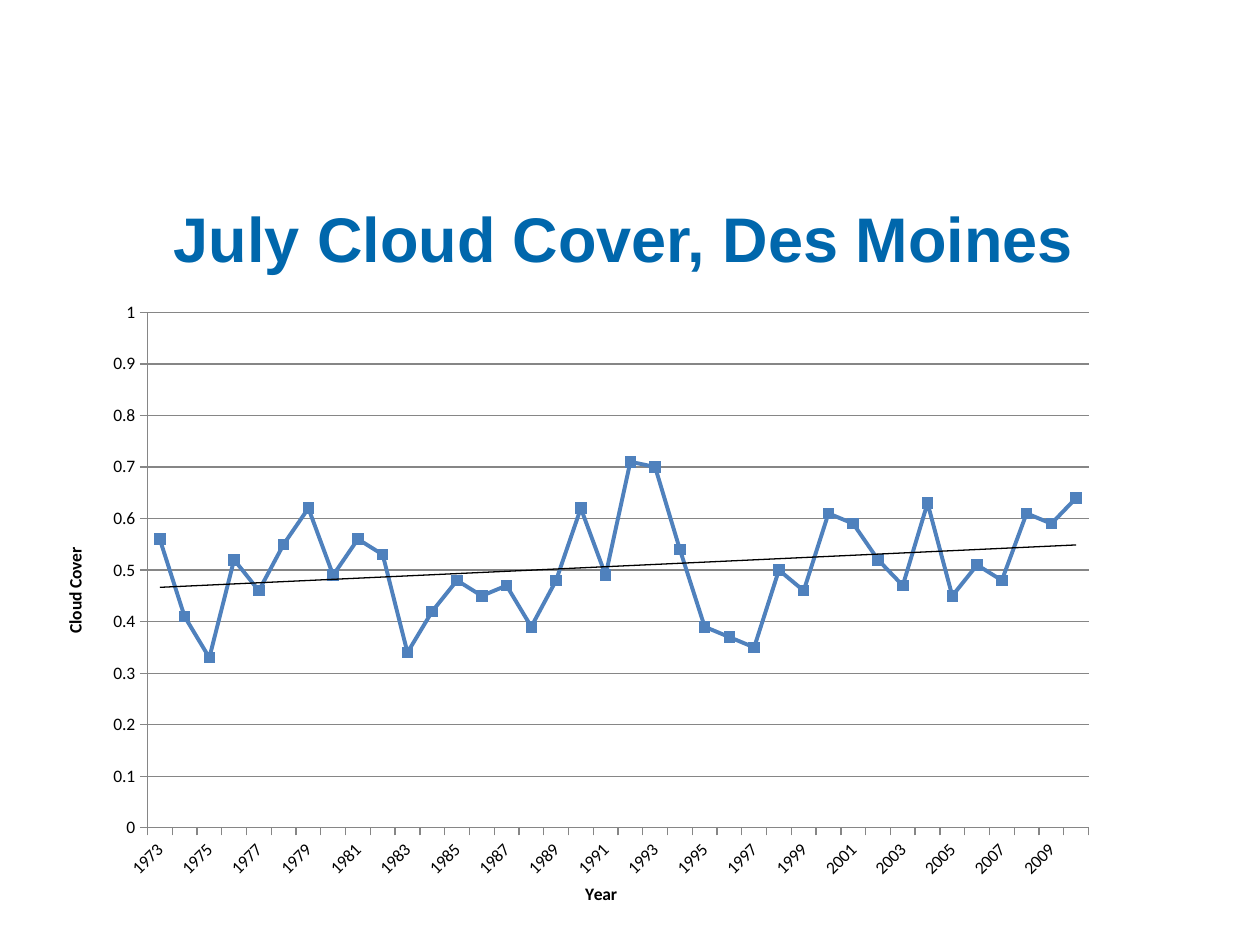
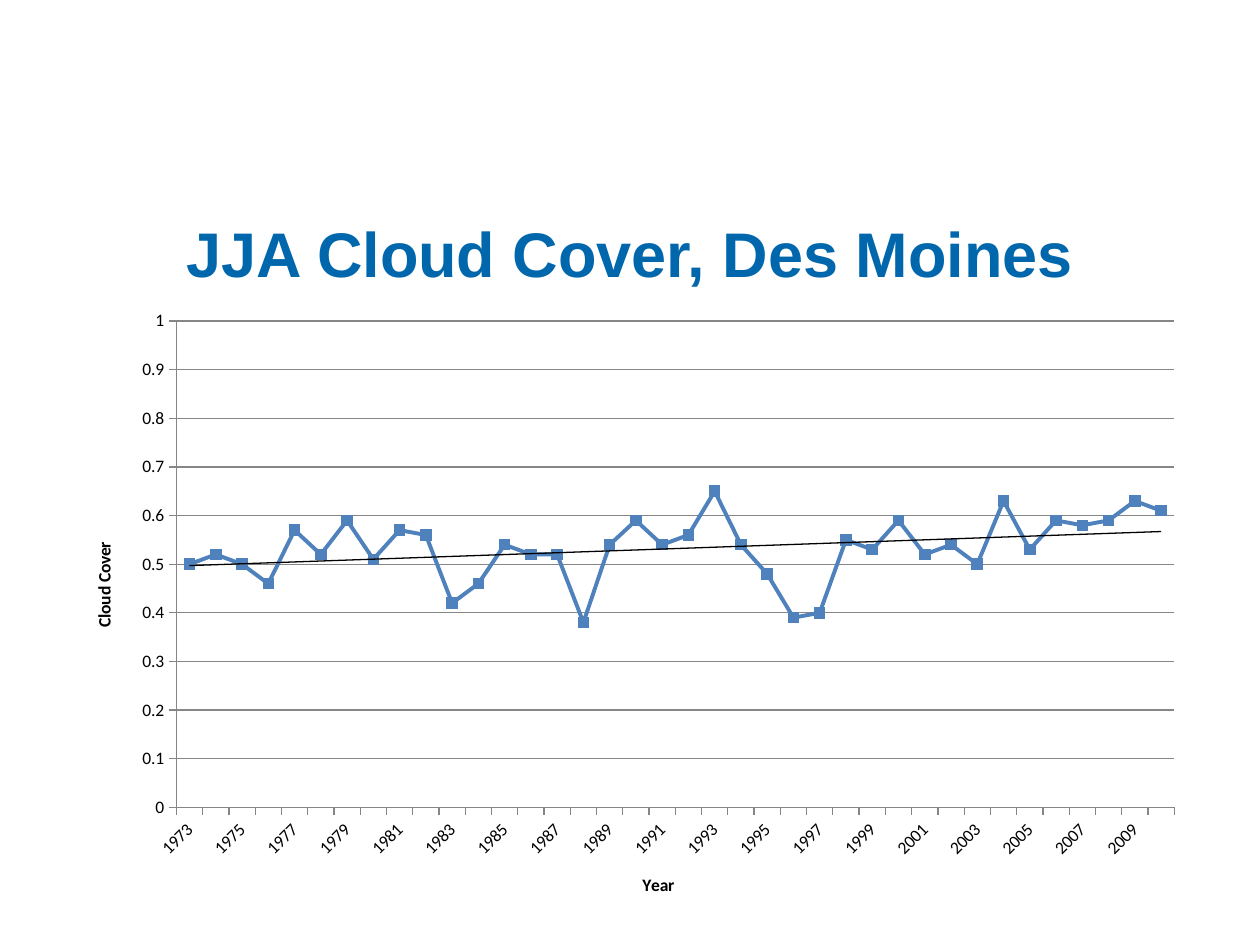
from lxml import etree
from pptx import Presentation
from pptx import util as u
from pptx.chart.data import CategoryChartData
from pptx.dml.color import RGBColor
from pptx.enum import chart as ch, text
from pptx.oxml import parse_xml
from pptx.oxml.ns import nsdecls, qn

Pt = u.Pt
TITLE_BLUE = RGBColor(0x00, 0x67, 0xAC)
SERIES_BLUE = RGBColor(0x4F, 0x81, 0xBD)
AXIS_GRAY = RGBColor(0x86, 0x86, 0x86)
BLACK = RGBColor(0, 0, 0)
WIDTH = 648
TITLE_HEIGHT = 73.44

YEARS = [str(year) for year in range(1973, 2011)]
JULY = [0.56, 0.41, 0.33, 0.52, 0.46, 0.55, 0.62, 0.49, 0.56, 0.53,
        0.34, 0.42, 0.48, 0.45, 0.47, 0.39, 0.48, 0.62, 0.49, 0.71,
        0.7, 0.54, 0.39, 0.37, 0.35, 0.5, 0.46, 0.61, 0.59, 0.52,
        0.47, 0.63, 0.45, 0.51, 0.48, 0.61, 0.59, 0.64]
SUMMER = [0.5, 0.52, 0.5, 0.46, 0.57, 0.52, 0.59, 0.51, 0.57, 0.56,
          0.42, 0.46, 0.54, 0.52, 0.52, 0.38, 0.54, 0.59, 0.54, 0.56,
          0.65, 0.54, 0.48, 0.39, 0.4, 0.55, 0.53, 0.59, 0.52, 0.54,
          0.5, 0.63, 0.53, 0.59, 0.58, 0.59, 0.63, 0.61]

TREND = f"""<c:trendline {nsdecls('c', 'a')}>
  <c:spPr><a:ln w="{Pt(0.75)}"><a:solidFill><a:srgbClr val="{BLACK}"/></a:solidFill></a:ln></c:spPr>
  <c:trendlineType val="linear"/><c:dispRSqr val="0"/><c:dispEq val="0"/>
</c:trendline>"""


def write(tf, content, font="Calibri", size=10, color=BLACK, bold=True):
    p = tf.paragraphs[0]
    p.alignment = text.PP_ALIGN.CENTER
    r = p.add_run()
    r.text = content
    r.font.name, r.font.size, r.font.bold = font, Pt(size), bold
    r.font.color.rgb = color


def draw_line(line, color, width):
    line.color.rgb = color
    line.width = Pt(width)


class Deck:
    def __init__(self):
        self.prs = Presentation()
        self.prs.slide_width, self.prs.slide_height = Pt(720), Pt(540)
        self.s = None

    def slide(self):
        self.s = self.prs.slides.add_slide(self.prs.slide_layouts[6])

    def title(self, content, left, top):
        sp = self.s.shapes.add_textbox(Pt(left), Pt(top), Pt(WIDTH), Pt(TITLE_HEIGHT))
        tf = sp.text_frame
        tf.word_wrap = True
        tf.vertical_anchor = text.MSO_ANCHOR.BOTTOM
        write(tf, content, font="Arial", size=36, color=TITLE_BLUE)

    def axis(self, axis, name):
        axis.has_title = True
        write(axis.axis_title.text_frame, name)
        axis.major_tick_mark = ch.XL_TICK_MARK.OUTSIDE
        axis.minor_tick_mark = ch.XL_TICK_MARK.NONE
        draw_line(axis.format.line, AXIS_GRAY, 0.75)

    def plot_area(self, chart, plot):
        area = chart.plots[0]._element.getparent()
        for old in area.findall(qn("c:layout")):
            area.remove(old)
        layout = parse_xml(f"<c:layout {nsdecls('c')}><c:manualLayout/></c:layout>")
        values = [("layoutTarget", "inner"), ("xMode", "edge"), ("yMode", "edge")]
        for tag, value in values + list(zip("xywh", plot)):
            etree.SubElement(layout[0], qn(f"c:{tag}")).set("val", str(value))
        area.insert(0, layout)

    def line_chart(self, values, left, top, height, plot):
        data = CategoryChartData()
        data.categories = YEARS
        data.add_series("Series 1", values)
        chart = self.s.shapes.add_chart(
            ch.XL_CHART_TYPE.LINE_MARKERS, Pt(left), Pt(top), Pt(WIDTH), Pt(height), data).chart
        chart.has_title = chart.has_legend = False
        chart.font.name, chart.font.size = "Calibri", Pt(10)
        chart.font.color.rgb = BLACK
        self.plot_area(chart, plot)

        years, cover = chart.category_axis, chart.value_axis
        self.axis(years, "Year")
        self.axis(cover, "Cloud Cover")
        years.tick_labels.font.size = Pt(10)
        years._element.find(qn("c:txPr"))[0].set("rot", "-2700000")
        last = years._element.find(qn("c:noMultiLvlLbl"))
        for tag, step in (("tickLblSkip", 2), ("tickMarkSkip", 1)):
            last.addprevious(parse_xml(f'<c:{tag} {nsdecls("c")} val="{step}"/>'))
        cover.minimum_scale, cover.maximum_scale, cover.major_unit = 0, 1, 0.1
        cover.tick_labels.number_format = "General"
        cover.tick_labels.number_format_is_linked = False
        cover.has_major_gridlines = True
        draw_line(cover.major_gridlines.format.line, AXIS_GRAY, 0.75)

        chart.plots[0].vary_by_categories = False
        series = chart.plots[0].series[0]
        series.smooth = False
        draw_line(series.format.line, SERIES_BLUE, 2.25)
        marker = series.marker
        marker.style, marker.size = ch.XL_MARKER_STYLE.SQUARE, 6
        marker.format.fill.solid()
        marker.format.fill.fore_color.rgb = SERIES_BLUE
        draw_line(marker.format.line, SERIES_BLUE, 0.75)
        series._element.find(qn("c:cat")).addprevious(parse_xml(TREND))


def main():
    deck = Deck()
    slides = [
        ("July Cloud Cover, Des Moines", JULY, 32.4, 87.12, 359.28, (0.08, 0.05, 0.83, 0.82)),
        ("JJA Cloud Cover, Des Moines", SUMMER, 36, 95.76, 356.4, (0.1, 0.04, 0.88, 0.78)),
    ]
    for name, values, left, top, height, plot in slides:
        deck.slide()
        deck.title(name, left, top)
        deck.line_chart(values, left, top + TITLE_HEIGHT, height, plot)
    deck.prs.save("out.pptx")


if __name__ == "__main__":
    main()
